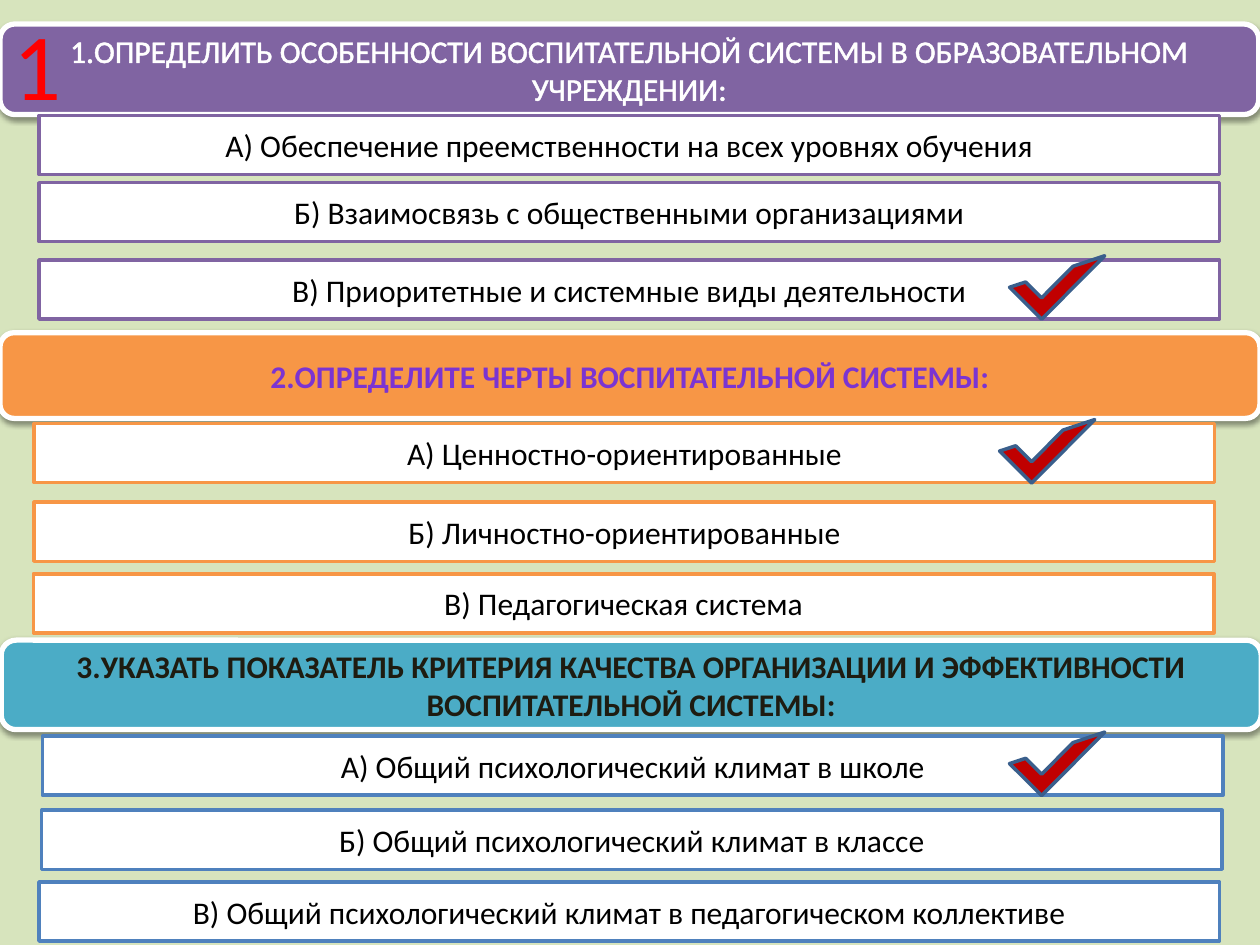
from dataclasses import dataclass

from lxml import etree
from pptx import Presentation
from pptx.dml.color import RGBColor
from pptx.enum.shapes import MSO_SHAPE
from pptx.enum.text import MSO_ANCHOR, MSO_AUTO_SIZE, PP_ALIGN
from pptx.oxml.ns import qn
from pptx.util import Pt

RECTANGLE = MSO_SHAPE.RECTANGLE
ROUNDED = MSO_SHAPE.ROUNDED_RECTANGLE
HALF_FRAME = MSO_SHAPE.HALF_FRAME
CENTER = PP_ALIGN.CENTER
MIDDLE = MSO_ANCHOR.MIDDLE
FIT_SHAPE = MSO_AUTO_SIZE.SHAPE_TO_FIT_TEXT


@dataclass(frozen=True)
class Theme:
    font: str = "Calibri"
    body_size: float = 18
    number_size: float = 54
    background: str = "D7E4BD"
    white: str = "FFFFFF"
    black: str = "000000"
    purple: str = "8064A2"
    orange: str = "F79646"
    teal: str = "4BACC6"
    blue: str = "4F81BD"
    dark: str = "1E1C11"
    text_edge: str = "5E457C"
    number: str = "FF0000"
    check: str = "C00000"
    check_edge: str = "3A5F8C"
    violet: tuple = ((0, "3D1B67"), (43, "7B34D2"), (48, "7330C4"), (100, "3D1B67"))


THEME = Theme()
ANSWER_WIDTH, ANSWER_HEIGHT = 674.6, 33.8
CHECK_WIDTH, CHECK_HEIGHT = 25.9, 51.1

# Header: text, (left, top, width, height), fill, text format.
# Answers: text, left, top. Check: left, top.
QUESTIONS = [
    dict(
        text="1.ОПРЕДЕЛИТЬ ОСОБЕННОСТИ ВОСПИТАТЕЛЬНОЙ СИСТЕМЫ В ОБРАЗОВАТЕЛЬНОМ УЧРЕЖДЕНИИ:",
        area=(0, 13.7, 719.3, 51.8), fill=THEME.purple, edge=THEME.purple,
        style=dict(color=THEME.white, outline=(THEME.white, 1.45)),
        answers=[("А) Обеспечение преемственности на всех уровнях обучения", 22.3, 66),
                 ("Б) Взаимосвязь с общественными организациями", 22.3, 104.4),
                 ("В) Приоритетные и системные виды деятельности", 22.3, 148.6)],
        check=(591.1, 129.6),
    ),
    dict(
        text="2.ОПРЕДЕЛИТЕ ЧЕРТЫ ВОСПИТАТЕЛЬНОЙ СИСТЕМЫ:",
        area=(0, 190.1, 720, 49), fill=THEME.orange, edge=THEME.orange,
        style=dict(gradient=THEME.violet, bold=True, outline=(THEME.text_edge, 0.71)),
        answers=[("А) Ценностно-ориентированные", 19.6, 242),
                 ("Б) Личностно-ориентированные", 19.6, 287),
                 ("В) Педагогическая система", 19.1, 327.9)],
        check=(585.4, 223.2),
    ),
    dict(
        text="3.УКАЗАТЬ ПОКАЗАТЕЛЬ КРИТЕРИЯ КАЧЕСТВА ОРГАНИЗАЦИИ И ЭФФЕКТИВНОСТИ "
             "ВОСПИТАТЕЛЬНОЙ СИСТЕМЫ:",
        area=(0.7, 365.8, 720, 51.1), fill=THEME.teal, edge=THEME.blue,
        style=dict(color=THEME.dark, bold=True, outline=(THEME.text_edge, 0.71)),
        answers=[("А) Общий психологический климат в школе", 24.3, 420.7),
                 ("Б) Общий психологический климат в классе", 23.8, 463),
                 ("В) Общий психологический климат в педагогическом коллективе", 22.3, 504)],
        check=(591.1, 401.8),
    ),
]


def rgb(color):
    return RGBColor.from_string(color)


def add_node(parent, tag, **attributes):
    node = etree.SubElement(parent, qn(tag))
    for name, value in attributes.items():
        node.set(name, str(value))
    return node


def set_gradient(font, properties, stops):
    font.fill.gradient()
    font.fill.gradient_angle = 270  # counter-clockwise, so it runs downwards
    stop_list = properties.find(qn("a:gradFill")).find(qn("a:gsLst"))
    for old_stop in list(stop_list):
        stop_list.remove(old_stop)
    for position, color in stops:
        stop = add_node(stop_list, "a:gs", pos=position * 1000)
        add_node(stop, "a:srgbClr", val=color)


def set_outline(properties, color, width):
    line = add_node(properties, "a:ln", w=int(Pt(width)))
    add_node(add_node(line, "a:solidFill"), "a:srgbClr", val=color)
    properties.insert(0, line)


def write_text(box, text, size=THEME.body_size, color=THEME.black, bold=False,
               outline=None, gradient=None, wrap=True):
    frame = box.text_frame
    frame.word_wrap = wrap
    frame.vertical_anchor = MIDDLE
    para = frame.paragraphs[0]
    para.alignment = CENTER
    span = para.add_run()
    span.text = text
    font = span.font
    font.name, font.size, font.bold = THEME.font, Pt(size), bold
    properties = span._r.get_or_add_rPr()
    if gradient:
        set_gradient(font, properties, gradient)
    else:
        font.color.rgb = rgb(color)
    if outline:
        set_outline(properties, *outline)


def add_box(page, kind, area, fill, edge, width):
    box = page.shapes.add_shape(kind, *map(Pt, area))
    box.shadow.inherit = False
    box.fill.solid()
    box.fill.fore_color.rgb = rgb(fill)
    box.line.color.rgb = rgb(edge)
    box.line.width = Pt(width)
    return box


def add_shadow(box):
    effects = box._element.spPr.find(qn("a:effectLst"))
    shadow = add_node(effects, "a:outerShdw", blurRad=int(Pt(3.1)),
                      dist=int(Pt(1.6)), dir=90 * 60000, rotWithShape=0)
    color = add_node(shadow, "a:srgbClr", val=THEME.black)
    add_node(color, "a:alpha", val=38000)


def add_header(page, text, area, fill, style):
    box = add_box(page, ROUNDED, area, fill, THEME.white, 3)
    add_shadow(box)
    write_text(box, text, **style)


def add_answer(page, text, left, top, edge):
    area = (left, top, ANSWER_WIDTH, ANSWER_HEIGHT)
    write_text(add_box(page, RECTANGLE, area, THEME.white, edge, 2), text)


def add_check(page, left, top):
    area = (left, top, CHECK_WIDTH, CHECK_HEIGHT)
    check = add_box(page, HALF_FRAME, area, THEME.check, THEME.check_edge, 2)
    check.rotation = 224.8


def add_number(page, text):
    box = page.shapes.add_textbox(Pt(0), Pt(0), Pt(42.5), Pt(72.7))
    write_text(box, text, size=THEME.number_size, color=THEME.number,
               outline=(THEME.white, 1.45), wrap=False)
    box.text_frame.vertical_anchor = MSO_ANCHOR.TOP
    box.text_frame.auto_size = FIT_SHAPE


def main():
    deck = Presentation()
    deck.slide_width, deck.slide_height = Pt(720), Pt(540)
    page = deck.slides.add_slide(deck.slide_layouts[6])
    page.background.fill.solid()
    page.background.fill.fore_color.rgb = rgb(THEME.background)
    for question in QUESTIONS:
        add_header(page, question["text"], question["area"],
                   question["fill"], question["style"])
        for text, left, top in question["answers"]:
            add_answer(page, text, left, top, question["edge"])
        add_check(page, *question["check"])
    add_number(page, "1")
    deck.save("out.pptx")


if __name__ == "__main__":
    main()
